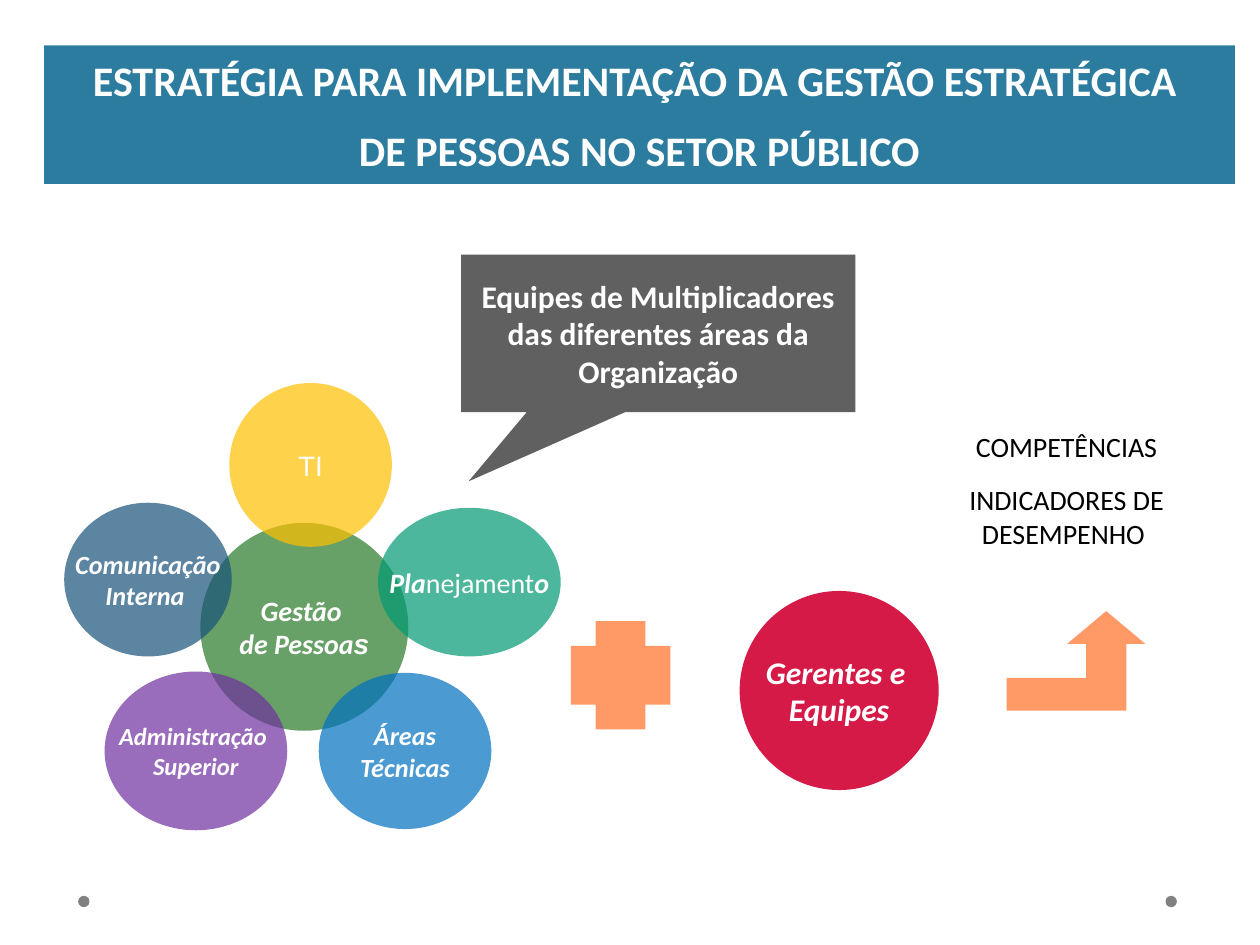
from lxml import etree
from pptx import Presentation
from pptx.dml.color import RGBColor
from pptx.enum.shapes import MSO_SHAPE
from pptx.enum.text import MSO_ANCHOR, MSO_AUTO_SIZE, PP_ALIGN
from pptx.oxml.ns import qn
from pptx.util import Inches, Pt

OVAL = MSO_SHAPE.OVAL
CROSS = MSO_SHAPE.CROSS
CALLOUT = MSO_SHAPE.RECTANGULAR_CALLOUT
MIDDLE, TOP = MSO_ANCHOR.MIDDLE, MSO_ANCHOR.TOP
CENTER = PP_ALIGN.CENTER
NO_FIT = MSO_AUTO_SIZE.NONE
TITLE_ONLY = 5

WHITE = RGBColor(0xFF, 0xFF, 0xFF)
BLACK = RGBColor(0x00, 0x00, 0x00)
TEAL = RGBColor(0x2C, 0x7C, 0x9F)
GRAY = RGBColor(0x60, 0x60, 0x60)
DOT = RGBColor(0x80, 0x80, 0x80)
GREEN = RGBColor(0x28, 0x7A, 0x28)
BLUE = RGBColor(0x00, 0x70, 0xC0)
PURPLE = RGBColor(0x70, 0x30, 0xA0)
JADE = RGBColor(0x00, 0x99, 0x73)
YELLOW = RGBColor(0xFF, 0xC0, 0x00)
NAVY = RGBColor(0x18, 0x52, 0x7A)
RED = RGBColor(0xD6, 0x1A, 0x47)
ORANGE = RGBColor(0xFF, 0x99, 0x66)


def write(shape, lines, size=16, font="Calibri", color=WHITE, bold=False,
          italic=False, gap=0, wrap=False, anchor=MIDDLE):
    """Each line is a string or a list of (text, format changes) runs."""
    frame = shape.text_frame
    frame.auto_size = NO_FIT
    frame.word_wrap = wrap
    frame.vertical_anchor = anchor
    for i, line in enumerate(lines):
        para = frame.add_paragraph() if i else frame.paragraphs[0]
        para.alignment = CENTER
        para.space_before = Pt(gap if i else 0)
        for text, diff in [(line, {})] if isinstance(line, str) else line:
            run = para.add_run()
            run.text = text
            run.font.size = Pt(size)
            run.font.name = diff.get("font", font)
            run.font.bold = diff.get("bold", bold)
            run.font.italic = diff.get("italic", italic)
            run.font.color.rgb = color


def paint(shape, color, alpha=100):
    shape.shadow.inherit = False
    shape.line.fill.background()
    shape.fill.solid()
    shape.fill.fore_color.rgb = color
    if alpha < 100:
        tone = shape.element.spPr.find(qn("a:solidFill"))[0]
        etree.SubElement(tone, qn("a:alpha"), val=str(alpha * 1000))


def add(slide, kind, box, color, alpha=100):
    shape = slide.shapes.add_shape(kind, *map(Inches, box))
    paint(shape, color, alpha)
    return shape


def add_title(slide, box):
    title = slide.shapes.title
    title.left, title.top, title.width, title.height = map(Inches, box)
    geom = etree.SubElement(title.element.spPr, qn("a:prstGeom"),
                            prst="flowChartAlternateProcess")
    etree.SubElement(geom, qn("a:avLst"))
    title.fill.solid()
    title.fill.fore_color.rgb = TEAL
    write(title, ["ESTRATÉGIA PARA IMPLEMENTAÇÃO DA GESTÃO ESTRATÉGICA ",
                  "DE PESSOAS NO SETOR PÚBLICO"], size=24, bold=True, gap=11.5)


def add_dots(slide, box):
    left, top, width, size = box
    for x in (left, left + width - size):
        add(slide, OVAL, (x, top, size, size), DOT)


def add_callout(slide, box):
    note = add(slide, CALLOUT, box, GRAY)
    note.adjustments[0], note.adjustments[1] = -0.481, 0.94
    write(note, ["Equipes de Multiplicadores das diferentes áreas da Organização"],
          size=18, bold=True, wrap=True)


def add_flower(slide, box):
    """Overlapping areas, from back to front, placed from the box corner."""
    left, top = box[:2]
    strong = {"bold": True, "italic": True}
    plain = {"bold": False, "italic": False}
    petals = [
        ((1.08, 1.11, 1.65, 1.65), GREEN,
         ["Gestão ", [("de Pessoa", {}), ("s", {"font": "Arial"})]], strong),
        ((2.02, 2.3, 1.37, 1.24), BLUE, ["Áreas", "Técnicas"],
         {"size": 15, **strong}),
        ((0.32, 2.29, 1.45, 1.26), PURPLE, ["Administração ", "Superior"],
         {"size": 14, **strong}),
        ((2.49, 0.99, 1.45, 1.18), JADE,
         [[("Pla", {}), ("nejament", plain), ("o", {})]], strong),
        ((1.31, 0, 1.29, 1.3), YELLOW, ["TI"], {"font": "Arial"}),
        ((0, 0.95, 1.33, 1.22), NAVY, ["Comunicação", "Interna "],
         {"size": 15, **strong}),
    ]
    for (x, y, width, height), color, lines, style in petals:
        petal = add(slide, OVAL, (left + x, top + y, width, height), color, 70)
        write(petal, lines, **style)


def add_plus(slide, box):
    add(slide, CROSS, box, ORANGE).adjustments[0] = 0.25


def add_teams(slide, box):
    write(add(slide, OVAL, box, RED), ["Gerentes e ", "Equipes"],
          size=18, bold=True, italic=True)


def add_arrow(slide, box):
    """Arrow that runs right and then turns up."""
    left, top, width, height = box
    tip, head, shaft = left + 0.79, top + 0.26, 0.16
    right, base = left + width, top + height
    points = [(tip, top), (right - 2 * (right - tip), head), (tip - shaft, head),
              (tip - shaft, base - 0.26), (left, base - 0.26), (left, base),
              (tip + shaft, base), (tip + shaft, head), (right, head)]
    points = [(Inches(x), Inches(y)) for x, y in points]
    path = slide.shapes.build_freeform(*points[0])
    path.add_line_segments(points[1:], close=True)
    paint(path.convert_to_shape(), ORANGE)


def add_goals(slide, box):
    goals = slide.shapes.add_textbox(*map(Inches, box))
    goals.fill.solid()
    goals.fill.fore_color.rgb = WHITE
    write(goals, ["COMPETÊNCIAS", "INDICADORES DE DESEMPENHO "],
          color=BLACK, gap=11.2, wrap=True, anchor=TOP)


def main():
    deck = Presentation()
    deck.slide_width, deck.slide_height = Inches(10), Inches(7.5)
    slide = deck.slides.add_slide(deck.slide_layouts[TITLE_ONLY])
    add_dots(slide, (0.62, 7.11, 8.72, 0.09))
    add_title(slide, (0.35, 0.36, 9.45, 1.1))
    add_callout(slide, (3.66, 2.02, 3.13, 1.25))
    add_goals(slide, (7.13, 3.36, 2.67, 1.07))
    add_flower(slide, (0.51, 3.04, 3.94, 3.55))
    add_teams(slide, (5.87, 4.69, 1.58, 1.58))
    add_plus(slide, (4.53, 4.93, 0.79, 0.86))
    add_arrow(slide, (7.99, 4.85, 1.1, 0.79))
    deck.save("out.pptx")


if __name__ == "__main__":
    main()
